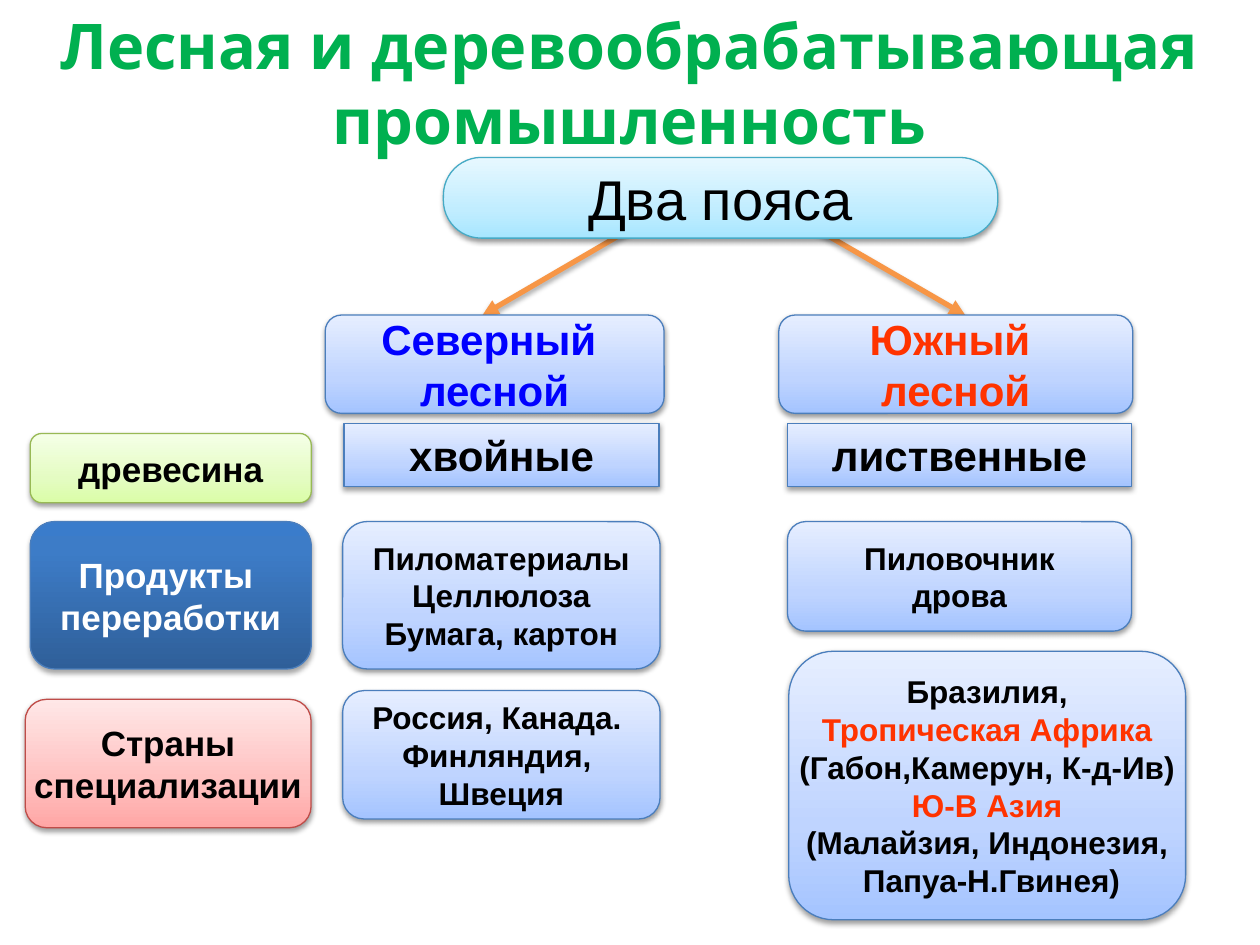
from pptx import Presentation
from pptx.dml.color import RGBColor as RGB
from pptx.enum.shapes import MSO_CONNECTOR as Conn, MSO_SHAPE as Shape
from pptx.enum.text import MSO_ANCHOR as Anchor, MSO_AUTO_SIZE as Fit, PP_ALIGN as Align
from pptx.oxml import parse_xml
from pptx.oxml.ns import nsdecls, qn
from pptx.util import Pt

INK = {"black": "000000", "white": "FFFFFF", "blue": "0000FF",
       "red": "FF3300", "green": "00B050", "orange": "F79646"}

# Outline colour and gradient stops (position, colour), bottom to top
SKIN = {
    "blue": ("4B7EBC", [(0, "A4C4FF"), (35, "BFD4FF"), (100, "E6EEFF")]),
    "deep": ("4B7EBC", [(0, "2F5F99"), (80, "3D7CC7"), (100, "3A7CCB")]),
    "rose": ("BF4C48", [(0, "FFA6A5"), (35, "FFC0BF"), (100, "FFE7E7")]),
    "lime": ("98B955", [(0, "DAFDA7"), (35, "E4FCC2"), (100, "F5FFE7")]),
    "aqua": ("46AAC5", [(0, "A7E6FF"), (35, "C1EDFF"), (100, "E7F8FF")]),
}


def rgb(name):
    return RGB.from_string(INK[name])


def add_glow(item, dist, alpha):
    """Give a shape or connector a soft shadow straight below."""
    props = item._element.spPr
    for old in props.findall(qn("a:effectLst")):
        props.remove(old)
    props.append(parse_xml(
        f'<a:effectLst {nsdecls("a")}><a:outerShdw blurRad="{Pt(3.1)}" '
        f'dist="{Pt(dist)}" dir="5400000" rotWithShape="0">'
        f'<a:srgbClr val="{INK["black"]}"><a:alpha val="{alpha * 1000}"/>'
        '</a:srgbClr></a:outerShdw></a:effectLst>'))


def paint(box, skin):
    edge, stops = SKIN[skin]
    box.fill.gradient()
    box.fill.gradient_angle = 90
    ramp = box._element.spPr.find(qn("a:gradFill")).find(qn("a:gsLst"))
    for old in list(ramp):
        ramp.remove(old)
    for pos, tone in stops:
        ramp.append(parse_xml(
            f'<a:gs {nsdecls("a")} pos="{pos * 1000}">'
            f'<a:srgbClr val="{tone}"/></a:gs>'))
    box.line.color.rgb = RGB.from_string(edge)
    box.line.width = Pt(0.75)
    if skin == "deep":
        add_glow(box, 1.8, 35)
    else:
        add_glow(box, 1.6, 38)


def style(para, size, tone, bold=True, face="Arial"):
    para.alignment = Align.CENTER
    font = para.font
    font.name, font.size, font.bold = face, Pt(size), bold
    font.color.rgb = rgb(tone)


def add_box(slide, area, lines, size, skin="blue", tone="black",
            bold=True, bend=0.167, accent=()):
    """Add a labelled box; bend None makes it square, accent lists red lines."""
    kind = Shape.RECTANGLE if bend is None else Shape.ROUNDED_RECTANGLE
    box = slide.shapes.add_shape(kind, *map(Pt, area))
    paint(box, skin)
    frame = box.text_frame
    if bend is None:
        frame.word_wrap = True
        frame.vertical_anchor = Anchor.TOP
        frame.auto_size = Fit.SHAPE_TO_FIT_TEXT
    else:
        box.adjustments[0] = bend
        frame.word_wrap = False
        frame.vertical_anchor = Anchor.MIDDLE
    frame.text = "\n".join(lines)
    for i, para in enumerate(frame.paragraphs):
        style(para, size, "red" if i in accent else tone, bold)


def add_arrow(slide, start, end):
    arrow = slide.shapes.add_connector(Conn.STRAIGHT, *map(Pt, start + end))
    arrow.line.color.rgb = rgb("orange")
    arrow.line.width = Pt(3)
    arrow.line._get_or_add_ln().append(
        parse_xml(f'<a:tailEnd {nsdecls("a")} type="triangle"/>'))
    add_glow(arrow, 1.8, 35)


def add_title(slide, text):
    title = slide.shapes.title
    title.left, title.top, title.width, title.height = map(
        Pt, (16.6, 0, 686.2, 94.3))
    frame = title.text_frame
    frame.word_wrap = True
    frame.vertical_anchor = Anchor.TOP
    frame.auto_size = Fit.SHAPE_TO_FIT_TEXT
    frame.text = text
    style(frame.paragraphs[0], 36, "green", face="Karla")


def main():
    deck = Presentation()
    deck.slide_width, deck.slide_height = Pt(720), Pt(540)
    slide = deck.slides.add_slide(deck.slide_layouts[5])
    add_title(slide, "Лесная и деревообрабатывающая промышленность")

    # Arrows from the root to the two belts
    add_arrow(slide, (382.3, 118), (275.8, 180))
    add_arrow(slide, (444.2, 118), (551.5, 180))

    # Column edges and row tops
    side, north, south = (17.3, 160.6), (195.8, 181.4), (450, 196.6)
    wood, goods = 241.9, 298.1

    def cell(col, top, high):
        return col[0], top, col[1], high

    # Belts
    add_box(slide, (185.8, 180, 193.7, 56.2), ["Северный ", "лесной"],
            24, tone="blue")
    add_box(slide, (445, 180, 202.3, 56.2), ["Южный ", "лесной"],
            24, tone="red")

    # Countries
    add_box(slide, (450.7, 372.2, 226.8, 153.4),
            ["Бразилия,", "Тропическая Африка", "(Габон,Камерун, К-д-Ив)",
             "Ю-В Азия", "(Малайзия, Индонезия,", " Папуа-Н.Гвинея)"],
            18, accent=(1, 3))
    add_box(slide, cell(north, 394.6, 73.4),
            ["Россия, Канада. ", "Финляндия, ", "Швеция"], 18)

    # Products
    add_box(slide, cell(south, goods, 62.6), ["Пиловочник", "дрова"], 18)
    add_box(slide, cell(north, goods, 84.2),
            ["Пиломатериалы", "Целлюлоза", "Бумага, картон"], 18)

    # Row labels
    add_box(slide, (14.4, 399.6, 163.4, 73.4), ["Страны", "специализации"],
            20, "rose")
    add_box(slide, cell(side, goods, 84.2), ["Продукты ", "переработки"],
            20, "deep", "white")
    add_box(slide, cell(side, 247.7, 39.6), ["древесина"], 20, "lime")

    # Wood types
    add_box(slide, (196.6, wood, 180, 36), ["хвойные"], 24, bend=None)
    add_box(slide, cell(south, wood, 36), ["лиственные"], 24, bend=None)

    # Root
    add_box(slide, (253.4, 90, 316.8, 46.1), ["Два пояса"], 32, "aqua",
            bold=False, bend=0.469)

    deck.save("out.pptx")


if __name__ == "__main__":
    main()
